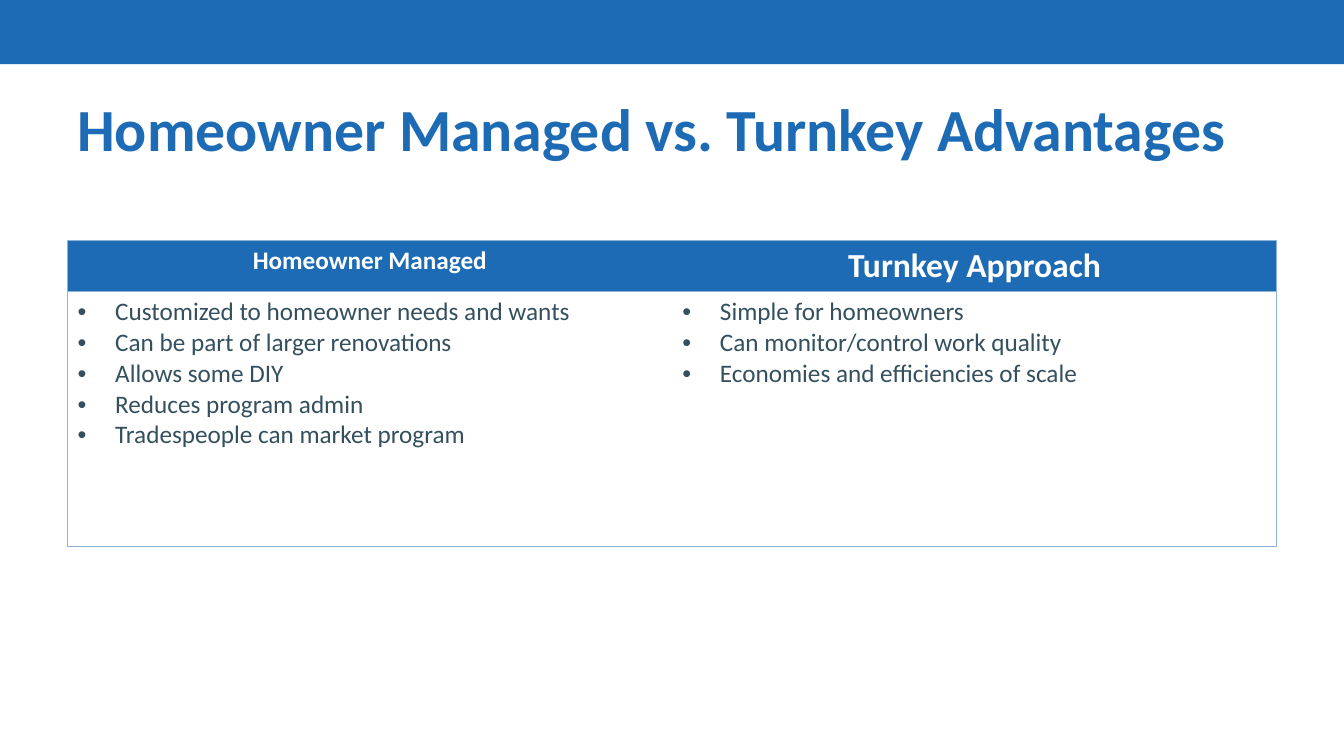
from lxml.etree import SubElement
from pptx import Presentation
from pptx.dml.color import RGBColor as Rgb
from pptx.enum.shapes import MSO_SHAPE as Shape
from pptx.enum.text import MSO_ANCHOR as Anchor, PP_ALIGN as Align
from pptx.oxml.ns import qn
from pptx.util import Cm, Pt

COLORS = {"blue": "1D6BB5", "border": "8DB2D5", "body": "34505E", "white": "FFFFFF"}

ADVANTAGES = {
    "Homeowner Managed": (18, [
        "Customized to homeowner needs and wants",
        "Can be part of larger renovations",
        "Allows some DIY",
        "Reduces program admin",
        "Tradespeople can market program",
    ]),
    "Turnkey Approach": (24, [
        "Simple for homeowners",
        "Can monitor/control work quality",
        "Economies and efficiencies of scale",
    ]),
}


class Deck:
    font = "Calibri"

    def __init__(self, width, height):
        self.presentation = Presentation()
        self.presentation.slide_width = Cm(width)
        self.presentation.slide_height = Cm(height)
        self.slide = self.presentation.slides.add_slide(self.presentation.slide_layouts[6])

    def color(self, name):
        return Rgb.from_string(COLORS[name])

    def set_text(self, frame, lines, size, color, bold=False, align=Align.LEFT, bullets=False):
        frame.text = "\n".join(lines)
        for paragraph in frame.paragraphs:
            paragraph.alignment = align
            if bullets:
                self.bullet(paragraph)
            for run in paragraph.runs:
                run.font.name = self.font
                run.font.size = Pt(size)
                run.font.bold = bold
                run.font.color.rgb = self.color(color)

    def bullet(self, paragraph):
        properties = paragraph._p.get_or_add_pPr()
        properties.set("marL", str(Cm(0.95)))
        properties.set("indent", str(-Cm(0.95)))
        SubElement(properties, qn("a:buFont"), typeface="Arial")
        SubElement(properties, qn("a:buChar"), char="•")

    def band(self, left, top, width, height, color):
        band = self.slide.shapes.add_shape(Shape.RECTANGLE, Cm(left), Cm(top), Cm(width), Cm(height))
        band.shadow.inherit = False
        band.fill.solid()
        band.fill.fore_color.rgb = self.color(color)
        band.line.fill.background()

    def title(self, left, top, width, height, wording):
        title = self.slide.shapes.add_textbox(Cm(left), Cm(top), Cm(width), Cm(height))
        title.text_frame.word_wrap = True
        title.text_frame.vertical_anchor = Anchor.MIDDLE
        self.set_text(title.text_frame, [wording], 42.7, "blue", bold=True)

    def borders(self, cell, sides):
        properties = cell._tc.get_or_add_tcPr()
        for side in "LRTB":
            line = SubElement(properties, qn(f"a:ln{side}"), w=str(Pt(0.75)))
            if side in sides:
                fill = SubElement(line, qn("a:solidFill"))
                SubElement(fill, qn("a:srgbClr"), val=COLORS["border"])
            else:
                SubElement(line, qn("a:noFill"))

    def fill_cell(self, cell, sides, color):
        self.borders(cell, sides)
        cell.fill.solid()
        cell.fill.fore_color.rgb = self.color(color)

    def comparison(self, left, top, width, row_heights, columns):
        table = self.slide.shapes.add_table(
            len(row_heights), len(columns), Cm(left), Cm(top), Cm(width), Cm(sum(row_heights))
        ).table
        table.horz_banding = False
        for row, height in zip(table.rows, row_heights):
            row.height = Cm(height)
        for index, (heading, (size, points)) in enumerate(columns.items()):
            table.columns[index].width = Cm(width / len(columns))
            outer = "L" if index == 0 else "R"
            header, body = table.cell(0, index), table.cell(1, index)
            self.fill_cell(header, outer + "T", "blue")
            self.fill_cell(body, outer + "TB", "white")
            self.set_text(header.text_frame, [heading], size, "white", bold=True, align=Align.CENTER)
            self.set_text(body.text_frame, points, 18, "body", bullets=True)


def main():
    deck = Deck(33.87, 19.05)
    deck.band(0, -0.04, 33.87, 1.66, "blue")
    deck.title(1.7, 1.63, 30.48, 3.18, "Homeowner Managed vs. Turnkey Advantages")
    deck.comparison(1.7, 6.07, 30.48, [1.28, 6.43], ADVANTAGES)
    deck.presentation.save("out.pptx")


if __name__ == "__main__":
    main()
